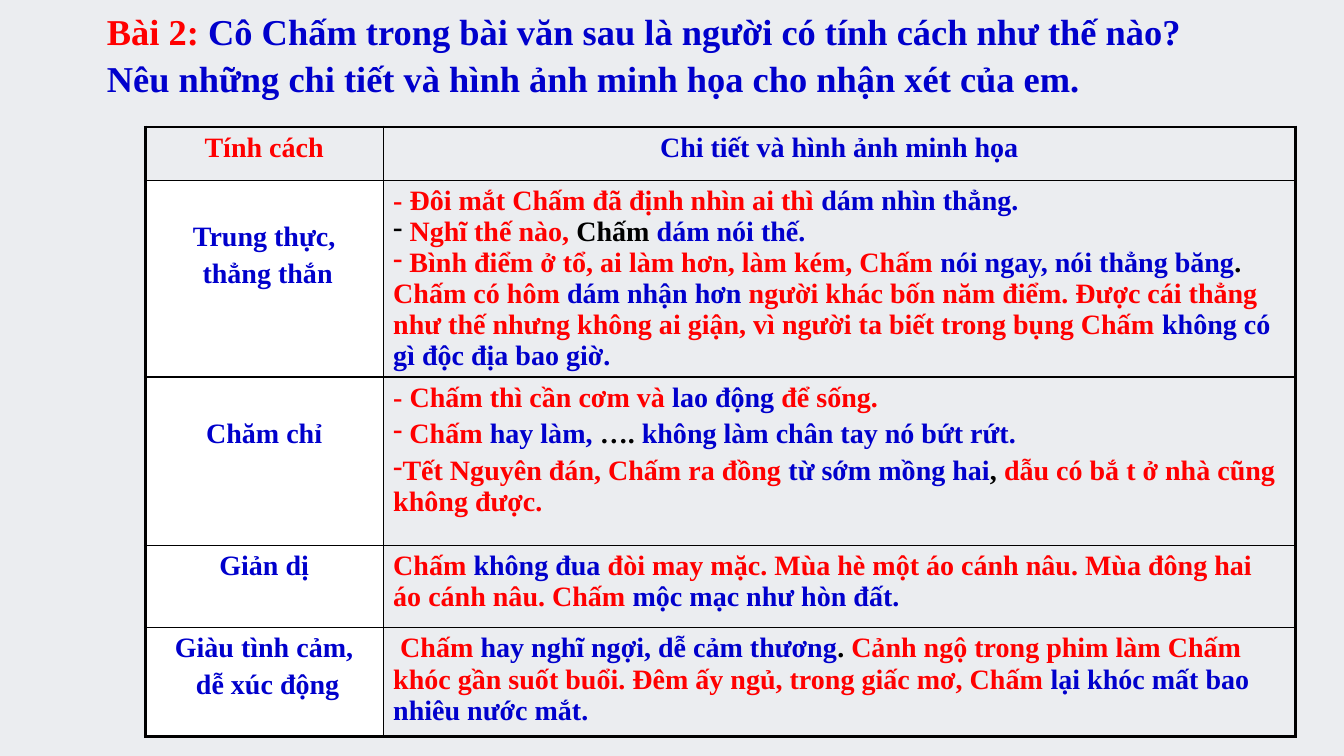
from dataclasses import dataclass
from lxml import etree
from pptx import Presentation, util as u
from pptx.dml.color import RGBColor
from pptx.enum import text as t
from pptx.oxml.ns import qn

HUES = {"red": "FF0000", "blue": "0000CC", "black": "000000",
        "white": "FFFFFF", "page": "EBEDF0"}
FONT = "Times New Roman"
THIN, THICK = 1, 2.25


@dataclass
class Para:
    runs: list[tuple[str, str]]
    dash: bool = False


@dataclass
class Row:
    high: float
    trait: list[Para]
    proof: list[Para]
    drop: float = 0.05  # top margin of the trait cell
    gap: float = 0  # points between the proof paragraphs


def red(words: str) -> tuple[str, str]:
    return words, "red"


def blue(words: str) -> tuple[str, str]:
    return words, "blue"


def black(words: str) -> tuple[str, str]:
    return words, "black"


def hue(name: str) -> RGBColor:
    return RGBColor.from_string(HUES[name])


def write(frame, paras: list[Para], *, size: float = 20, gap: float = 0,
          align=t.PP_ALIGN.LEFT) -> None:
    frame.word_wrap = True
    for i, para in enumerate(paras):
        line = frame.paragraphs[0] if i == 0 else frame.add_paragraph()
        line.alignment = align
        line.space_before = u.Pt(gap if i else 0)
        if para.dash:
            props = line._p.get_or_add_pPr()
            etree.SubElement(props, qn("a:buFontTx"))
            etree.SubElement(props, qn("a:buChar")).set("char", "-")
        for words, name in para.runs:
            run = line.add_run()
            run.text = words
            font = run.font
            font.name, font.size, font.bold = FONT, u.Pt(size), True
            font.color.rgb = hue(name)


def edge(cell, sides: dict[str, float]) -> None:
    """Draw the cell borders; they must come before the fill in the XML."""
    props = cell._tc.get_or_add_tcPr()
    for i, (side, width) in enumerate(sides.items()):
        line = etree.Element(qn(f"a:ln{side}"), w=str(u.Pt(width)))
        fill = etree.SubElement(line, qn("a:solidFill"))
        etree.SubElement(fill, qn("a:srgbClr")).set("val", HUES["black"])
        props.insert(i, line)


ROWS = [
    Row(0.53, [Para([red("Tính cách")])],
        [Para([blue("Chi tiết và hình ảnh minh họa")])]),
    Row(1.9, [Para([blue("Trung thực,")]), Para([blue(" thẳng thắn")])], [
        Para([red("- Đôi mắt Chấm đã định nhìn ai thì "), blue("dám nhìn thẳng.")]),
        Para([black(" "), red("Nghĩ thế nào, "), black("Chấm "),
              blue("dám nói thế.")], dash=True),
        Para([red(" Bình điểm ở tổ, ai làm hơn, làm kém, Chấm "),
              blue("nói ngay, nói thẳng băng"), black(". "),
              red("Chấm có hôm "), blue("dám nhận hơn "),
              red("người khác bốn năm điểm. Được cái thẳng như thế nhưng "
                  "không ai giận, vì người ta biết trong bụng Chấm "),
              blue("không có gì độc địa bao giờ.")], dash=True),
    ], drop=0.41),
    Row(1.67, [Para([blue("Chăm chỉ")])], [
        Para([red("- Chấm thì cần cơm và "), blue("lao động "), red("để sống.")]),
        Para([red(" Chấm "), blue("hay làm, "), black("…. "),
              blue("không làm chân tay nó bứt rứt.")], dash=True),
        Para([red("Tết Nguyên đán, Chấm ra đồng "), blue("từ sớm mồng hai"),
              black(", "), red("dẫu có bắ t ở nhà cũng không được.")], dash=True),
    ], drop=0.41, gap=4),
    Row(0.82, [Para([blue("Giản dị")])], [
        Para([red("Chấm "), blue("không đua "),
              red("đòi may mặc. Mùa hè một áo cánh nâu. "
                  "Mùa đông hai áo cánh nâu. Chấm "),
              blue("mộc mạc như hòn đất.")]),
    ]),
    Row(1.08, [Para([blue("Giàu tình cảm,")]), Para([blue(" dễ xúc động")])], [
        Para([red(" Chấm "), blue("hay nghĩ ngợi, dễ cảm thương"), black(". "),
              red("Cảnh ngộ trong phim làm Chấm khóc gần suốt buổi. "
                  "Đêm ấy ngủ, trong giấc mơ, Chấm "),
              blue("lại khóc mất bao nhiêu nước mắt.")]),
    ]),
]
TITLE = [
    Para([red("Bài 2: "),
          blue("Cô Chấm trong bài văn sau là người có tính cách như thế nào?")]),
    Para([blue("Nêu những chi tiết và hình ảnh minh họa cho nhận xét của em.")]),
]


def head(slide) -> None:
    title = slide.shapes.title
    title.left, title.top = u.Inches(0.96), u.Inches(0)
    title.width, title.height = u.Inches(11.41), u.Inches(0.98)
    frame = title.text_frame
    frame.auto_size = t.MSO_AUTO_SIZE.NONE
    frame.vertical_anchor = t.MSO_ANCHOR.TOP
    frame.margin_top = u.Inches(0.09)
    write(frame, TITLE, size=26, gap=2.6)


def grid(slide) -> None:
    high = sum(row.high for row in ROWS)
    table = slide.shapes.add_table(
        len(ROWS), 2, u.Inches(1.44), u.Inches(1.26),
        u.Inches(11.41), u.Inches(high)).table
    table.first_row = table.horz_banding = False
    for col, width in zip(table.columns, (2.36, 9.05)):
        col.width = u.Inches(width)
    last = len(ROWS) - 1
    for i, row in enumerate(ROWS):
        table.rows[i].height = u.Inches(row.high)
        left, right = table.cell(i, 0), table.cell(i, 1)
        left.margin_top = u.Inches(row.drop)
        mid = t.PP_ALIGN.CENTER
        write(left.text_frame, row.trait, gap=4, align=mid)
        write(right.text_frame, row.proof, gap=row.gap,
              align=t.PP_ALIGN.LEFT if i else mid)
        for j, cell in enumerate((left, right)):
            if i and j == 0:
                cell.fill.solid()
                cell.fill.fore_color.rgb = hue("white")
            else:
                cell.fill.background()
            edge(cell, {"L": THIN if j else THICK,
                        "R": THICK if j else THIN,
                        "T": THIN if i else THICK,
                        "B": THICK if i == last else THIN})


def main() -> None:
    deck = Presentation()
    deck.slide_width, deck.slide_height = u.Inches(13.33), u.Inches(7.5)
    slide = deck.slides.add_slide(deck.slide_layouts[5])
    back = slide.background.fill
    back.solid()
    back.fore_color.rgb = hue("page")
    head(slide)
    grid(slide)
    deck.save("out.pptx")


if __name__ == "__main__":
    main()
